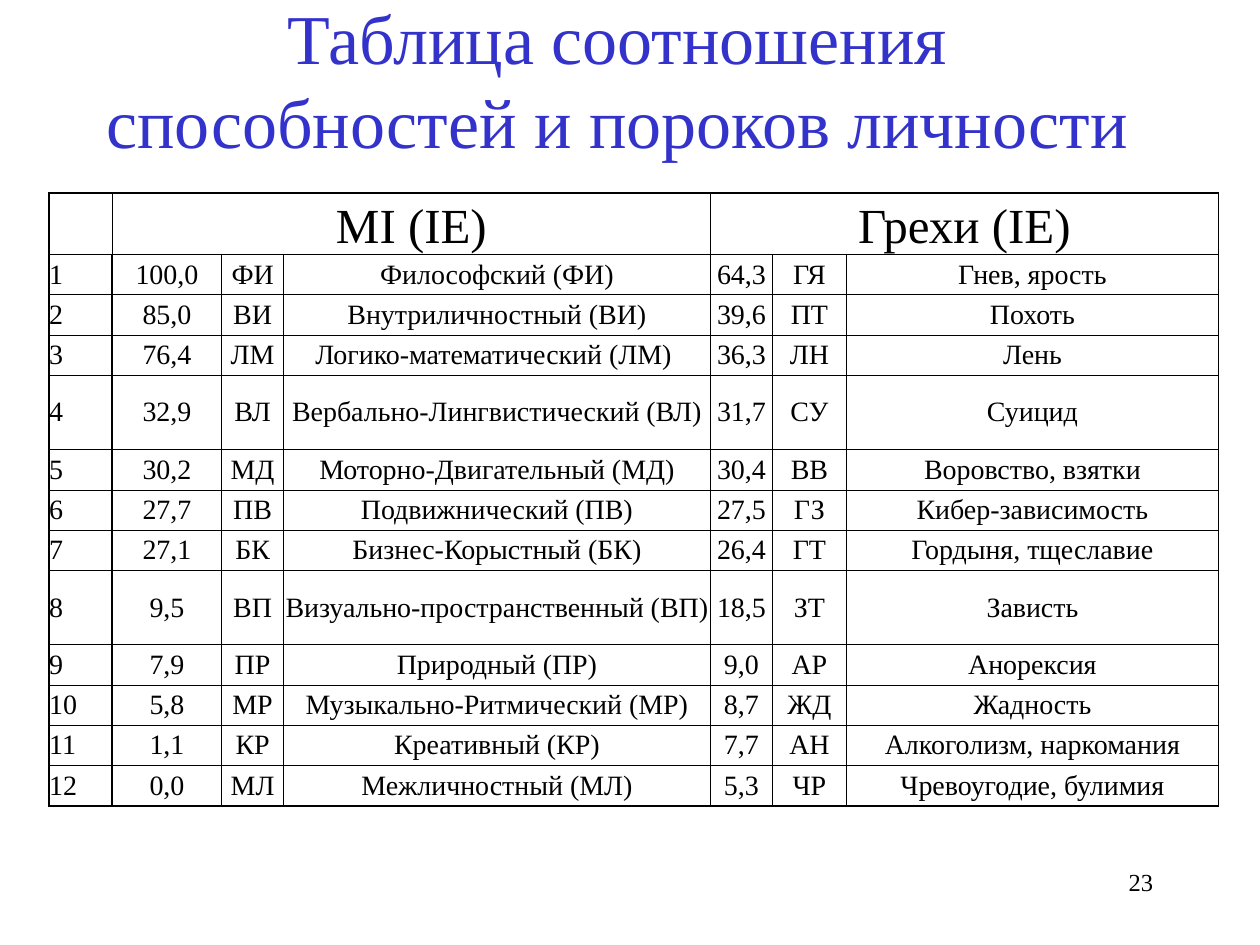
from typing import NamedTuple

from lxml.etree import SubElement
from pptx import Presentation
from pptx.dml.color import RGBColor
from pptx.enum.text import MSO_ANCHOR, PP_ALIGN
from pptx.oxml.ns import qn
from pptx.util import Inches, Pt

FONT = "Times New Roman"
BLACK = "000000"
TITLE_BLUE = "3333CC"
THICK, THIN = 1, 0.5
COLUMN_WIDTHS = [0.5, 0.87, 0.49, 3.39, 0.49, 0.59, 2.95]
HEADER_HEIGHT, ROW_HEIGHT, TALL_HEIGHT = 0.49, 0.32, 0.59
TALL_ROWS = (4, 8)
GROUPS = {1: "MI (IE)", 4: "Грехи (IE)"}
GROUP_EDGES = (0, 1, 4, 7)


class Rank(NamedTuple):
    ability_score: str
    ability_code: str
    ability: str
    sin_score: str
    sin_code: str
    sin: str


RANKS = [
    Rank("100,0", "ФИ", "Философский (ФИ)", "64,3", "ГЯ", "Гнев, ярость"),
    Rank("85,0", "ВИ", "Внутриличностный (ВИ)", "39,6", "ПТ", "Похоть"),
    Rank("76,4", "ЛМ", "Логико-математический (ЛМ) ", "36,3", "ЛН", "Лень"),
    Rank("32,9", "ВЛ", "Вербально-Лингвистический (ВЛ)", "31,7", "СУ", "Суицид"),
    Rank("30,2", "МД", "Моторно-Двигательный (МД)", "30,4", "ВВ", "Воровство, взятки"),
    Rank("27,7", "ПВ", "Подвижнический (ПВ)", "27,5", "ГЗ", "Кибер-зависимость"),
    Rank("27,1", "БК", "Бизнес-Корыстный (БК)", "26,4", "ГТ", "Гордыня, тщеславие"),
    Rank("9,5", "ВП", "Визуально-пространственный (ВП)", "18,5", "ЗТ", "Зависть"),
    Rank("7,9", "ПР", "Природный (ПР)", "9,0", "АР", "Анорексия"),
    Rank("5,8", "МР", "Музыкально-Ритмический (МР)", "8,7", "ЖД", "Жадность"),
    Rank("1,1", "КР", "Креативный (КР)", "7,7", "АН", "Алкоголизм, наркомания"),
    Rank("0,0", "МЛ", "Межличностный (МЛ)", "5,3", "ЧР", "Чревоугодие, булимия"),
]


def write(frame, text: str, *, size: float, color: str = BLACK, align=PP_ALIGN.CENTER) -> None:
    """Put one formatted paragraph into a text frame."""
    para = frame.paragraphs[0]
    para.alignment = align
    span = para.add_run()
    span.text = text
    span.font.name = FONT
    span.font.size = Pt(size)
    span.font.color.rgb = RGBColor.from_string(color)


def add_text(page, text: str, left: float, top: float, width: float, height: float,
             *, anchor=MSO_ANCHOR.TOP, **text_format) -> None:
    """Add a wrapping text box."""
    box = page.shapes.add_textbox(Inches(left), Inches(top), Inches(width), Inches(height))
    frame = box.text_frame
    frame.word_wrap = True
    frame.vertical_anchor = anchor
    write(frame, text, **text_format)


def set_borders(cell, widths: dict[str, float]) -> None:
    """Draw black cell borders with the given widths in points."""
    properties = cell._tc.get_or_add_tcPr()
    for side, width in widths.items():
        line = SubElement(properties, qn(f"a:{side}"), w=str(Pt(width)))
        fill = SubElement(line, qn("a:solidFill"))
        SubElement(fill, qn("a:srgbClr"), val=BLACK)


def vertical_width(row: int, edge: int) -> float:
    """Return the width of a vertical rule, thick around column groups."""
    thick_edges = GROUP_EDGES if row else (GROUP_EDGES[0], GROUP_EDGES[-1])
    return THICK if edge in thick_edges else THIN


def horizontal_width(edge: int) -> float:
    """Return the width of a horizontal rule, thick around header and body."""
    return THICK if edge in (0, 1, len(RANKS) + 1) else THIN


def style_cell(cell, row: int, column: int) -> None:
    """Clear the margins and fill of a cell and draw its borders."""
    cell.margin_left = cell.margin_right = cell.margin_top = cell.margin_bottom = 0
    cell.vertical_anchor = MSO_ANCHOR.MIDDLE if row else MSO_ANCHOR.BOTTOM
    set_borders(cell, {
        "lnL": vertical_width(row, column),
        "lnR": vertical_width(row, column + 1),
        "lnT": horizontal_width(row),
        "lnB": horizontal_width(row + 1),
    })
    cell.fill.background()


def add_ranking(page, left: float, top: float) -> None:
    """Add the table of abilities and sins."""
    heights = [HEADER_HEIGHT] + [
        TALL_HEIGHT if number in TALL_ROWS else ROW_HEIGHT
        for number in range(1, len(RANKS) + 1)
    ]
    table = page.shapes.add_table(
        len(heights), len(COLUMN_WIDTHS), Inches(left), Inches(top),
        Inches(sum(COLUMN_WIDTHS)), Inches(sum(heights))).table
    table.first_row = table.horz_banding = False
    for column, width in zip(table.columns, COLUMN_WIDTHS):
        column.width = Inches(width)
    for row, height in zip(table.rows, heights):
        row.height = Inches(height)
    for row in range(len(heights)):
        for column in range(len(COLUMN_WIDTHS)):
            style_cell(table.cell(row, column), row, column)
    for column, heading in GROUPS.items():
        cell = table.cell(0, column)
        cell.merge(table.cell(0, column + 2))
        write(cell.text_frame, heading, size=28)
    for row, rank in enumerate(RANKS, 1):
        for column, text in enumerate((str(row), *rank)):
            align = PP_ALIGN.CENTER if column else PP_ALIGN.LEFT
            write(table.cell(row, column).text_frame, text, size=16, align=align)


def main() -> None:
    """Build and save the deck."""
    deck = Presentation()
    deck.slide_width, deck.slide_height = Inches(10), Inches(7.5)
    page = deck.slides.add_slide(deck.slide_layouts[6])
    add_text(page, "Таблица соотношения способностей и пороков личности",
             0.65, 0, 8.5, 1.25, anchor=MSO_ANCHOR.MIDDLE, size=40, color=TITLE_BLUE)
    add_ranking(page, 0.39, 1.53)
    add_text(page, "23", 7.17, 6.83, 2.08, 0.5, size=14, align=PP_ALIGN.RIGHT)
    deck.save("out.pptx")


if __name__ == "__main__":
    main()
